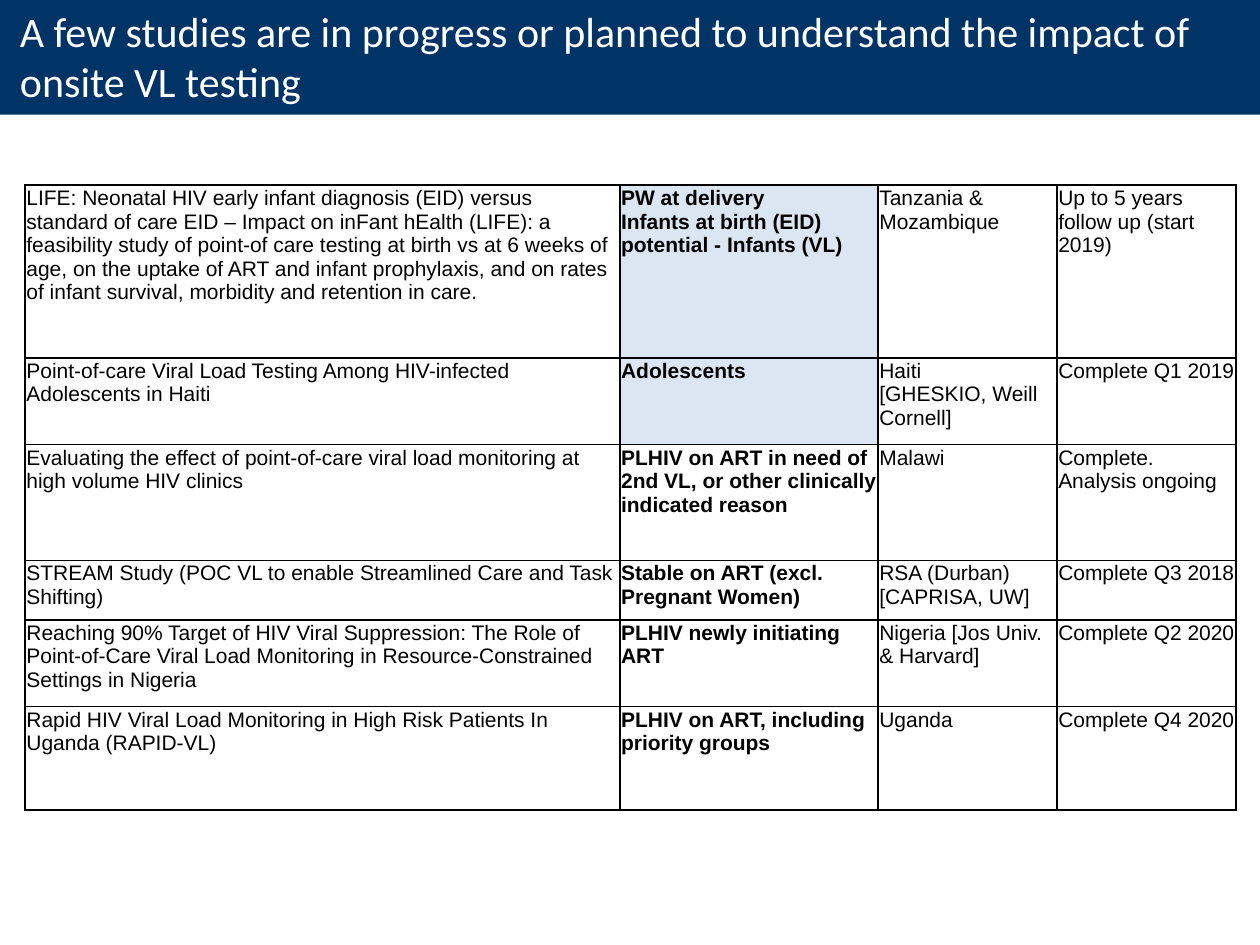
from lxml import etree
from pptx import Presentation
from pptx.dml.color import RGBColor
from pptx.enum.shapes import MSO_SHAPE
from pptx.enum.text import MSO_ANCHOR, PP_ALIGN
from pptx.oxml.ns import qn
from pptx.util import Inches, Pt

RECTANGLE = MSO_SHAPE.RECTANGLE
MIDDLE = MSO_ANCHOR.MIDDLE
LEFT = PP_ALIGN.LEFT

NAVY, WHITE, BLACK, PALE_BLUE = "003366", "FFFFFF", "000000", "DCE6F2"
TITLE = ("A few studies are in progress or planned to understand "
         "the impact of onsite VL testing")
COLUMN_WIDTHS = [4.72, 2.05, 1.42, 1.42]
ROW_HEIGHTS = [1.37, 0.69, 0.92, 0.47, 0.69, 0.82]
POPULATION_COLUMN = 1
HIGHLIGHTED_ROWS = 2
STUDIES = [
    ("LIFE: Neonatal HIV early infant diagnosis (EID) versus standard of care "
     "EID – Impact on inFant hEalth (LIFE): a feasibility study of point-of care "
     "testing at birth vs at 6 weeks of age, on the uptake of ART and infant "
     "prophylaxis, and on rates of infant survival, morbidity and retention in care.",
     "PW at delivery\nInfants at birth (EID)\npotential - Infants (VL)",
     "Tanzania & Mozambique",
     "Up to 5 years follow up (start 2019)"),
    ("Point-of-care Viral Load Testing Among HIV-infected Adolescents in Haiti",
     "Adolescents",
     "Haiti\n[GHESKIO, Weill Cornell]",
     "Complete Q1 2019"),
    ("Evaluating the effect of point-of-care viral load monitoring at high volume "
     "HIV clinics",
     "PLHIV on ART in need of 2nd VL, or other clinically indicated reason",
     "Malawi",
     "Complete. Analysis ongoing"),
    ("STREAM Study (POC VL to enable Streamlined Care and Task Shifting)",
     "Stable on ART (excl. Pregnant Women)",
     "RSA (Durban)\n[CAPRISA, UW]",
     "Complete Q3 2018"),
    ("Reaching 90% Target of HIV Viral Suppression: The Role of Point-of-Care "
     "Viral Load Monitoring in Resource-Constrained Settings in Nigeria",
     "PLHIV newly initiating ART",
     "Nigeria [Jos Univ. & Harvard]",
     "Complete Q2 2020"),
    ("Rapid HIV Viral Load Monitoring in High Risk Patients In Uganda (RAPID-VL)",
     "PLHIV on ART, including priority groups",
     "Uganda",
     "Complete Q4 2020"),
]


def paint(fill, color):
    fill.solid()
    fill.fore_color.rgb = RGBColor.from_string(color)


def write(para, text, font, size, color, bold=False):
    para.alignment = LEFT
    for index, line in enumerate(text.split("\n")):
        if index:
            para.add_line_break()
        span = para.add_run()
        span.text = line
        span.font.name = font
        span.font.size = Pt(size)
        span.font.bold = bold
        paint(span.font.fill, color)


def add_title_bar(page):
    bar = page.shapes.add_shape(RECTANGLE, Inches(0), Inches(-0.03),
                                Inches(10), Inches(0.94))
    bar.shadow.inherit = False
    paint(bar.fill, NAVY)
    bar.line.fill.background()
    frame = bar.text_frame
    frame.word_wrap = True
    frame.vertical_anchor = MIDDLE
    para = frame.paragraphs[0]
    write(para, TITLE, "Calibri", 24, WHITE)
    para._p.get_or_add_pPr().set("marL", str(Inches(0.06)))


def add_borders(cell, color, width):
    properties = cell._tc.get_or_add_tcPr()
    for index, side in enumerate(("a:lnL", "a:lnR", "a:lnT", "a:lnB")):
        line = etree.Element(qn(side), w=str(Pt(width)))
        fill = etree.SubElement(line, qn("a:solidFill"))
        etree.SubElement(fill, qn("a:srgbClr"), val=color)
        properties.insert(index, line)


def fill_cell(cell, row, column, text):
    cell.margin_left = cell.margin_right = cell.margin_top = Inches(0.01)
    cell.margin_bottom = 0
    is_population = column == POPULATION_COLUMN
    write(cell.text_frame.paragraphs[0], text, "Arial", 12, BLACK, is_population)
    if not is_population:
        paint(cell.fill, WHITE)
    elif row < HIGHLIGHTED_ROWS:
        paint(cell.fill, PALE_BLUE)
    else:
        cell.fill.background()
    add_borders(cell, BLACK, 1)


def add_study_table(page):
    table = page.shapes.add_table(
        len(ROW_HEIGHTS), len(COLUMN_WIDTHS), Inches(0.2), Inches(1.47),
        Inches(sum(COLUMN_WIDTHS)), Inches(sum(ROW_HEIGHTS))).table
    table.first_row = False
    table.horz_banding = False
    for column, width in zip(table.columns, COLUMN_WIDTHS):
        column.width = Inches(width)
    for row, height in zip(table.rows, ROW_HEIGHTS):
        row.height = Inches(height)
    for row, study in enumerate(STUDIES):
        for column, text in enumerate(study):
            fill_cell(table.cell(row, column), row, column, text)


def main():
    deck = Presentation()
    deck.slide_width = Inches(10)
    deck.slide_height = Inches(7.5)
    page = deck.slides.add_slide(deck.slide_layouts[6])
    add_title_bar(page)
    add_study_table(page)
    deck.save("out.pptx")


if __name__ == "__main__":
    main()
